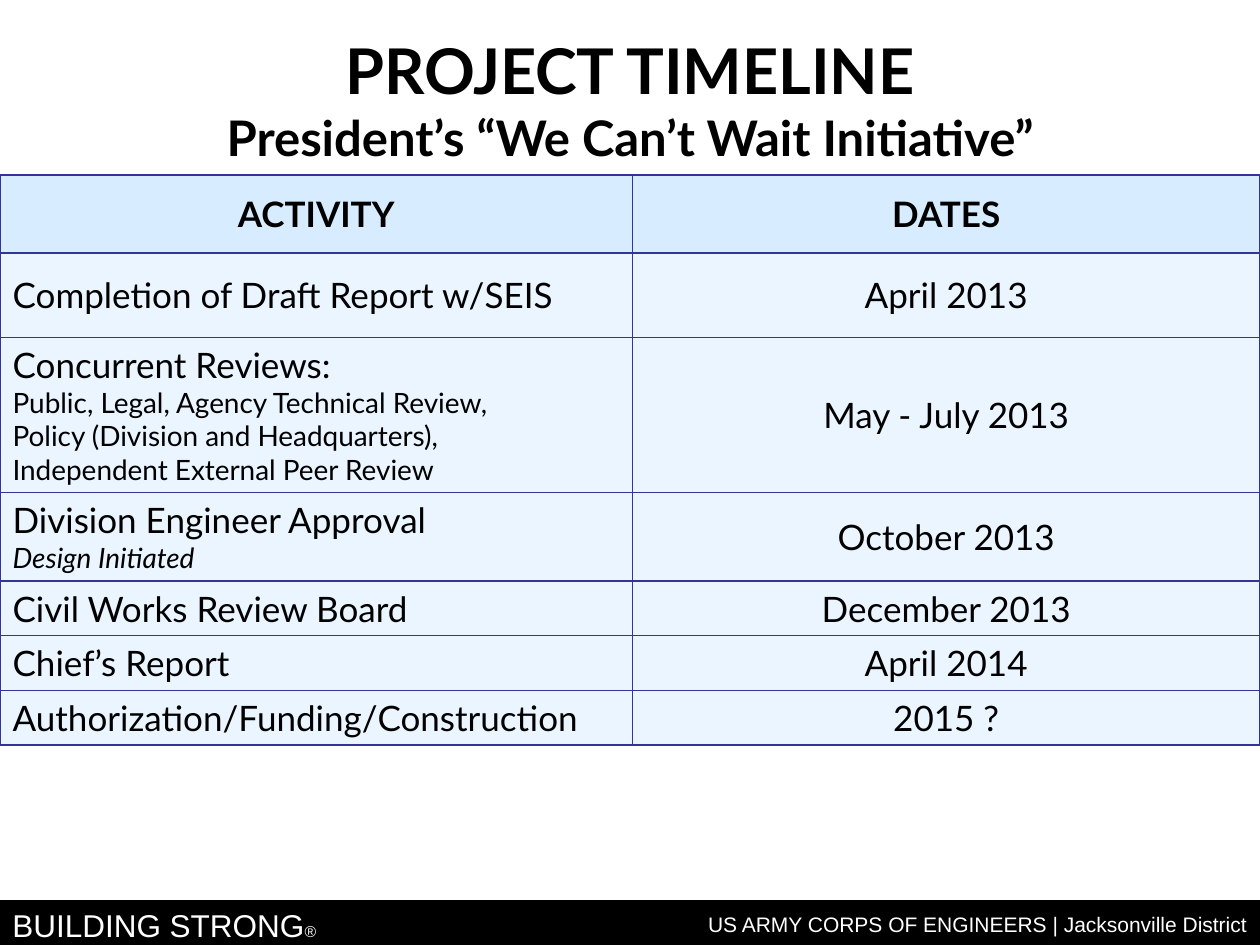
from dataclasses import dataclass

from lxml import etree
from pptx import Presentation
from pptx import util as u
from pptx.dml.color import RGBColor
from pptx.enum import shapes, text
from pptx.oxml import ns


@dataclass(frozen=True)
class Theme:
    ink: str = "000000"
    paper: str = "FFFFFF"
    border: str = "333399"
    header_fill: str = "D8ECFF"
    body_fill: str = "EBF5FF"
    heading_font: str = "Lato"
    footer_font: str = "Arial"
    title: int = 36
    subtitle: int = 28
    cell: int = 20
    detail: int = 16
    motto: int = 18
    mark: int = 9
    office: int = 12


theme = Theme()


def write(paragraph, words, size=theme.cell, font=theme.heading_font, color=theme.ink,
          bold=False, italic=False, align=text.PP_ALIGN.LEFT):
    """Append formatted text to a paragraph; a newline becomes a line break."""
    paragraph.alignment = align
    for index, line in enumerate(words.split("\n")):
        if index:
            paragraph.add_line_break()
        if line:
            run = paragraph.add_run()
            run.text = line
            run.font.size = u.Pt(size)
            run.font.name = font
            run.font.bold = bold
            run.font.italic = italic
            run.font.color.rgb = RGBColor.from_string(color)


def outline_cell(cell):
    properties = cell._tc.get_or_add_tcPr()
    for position, side in enumerate(("lnL", "lnR", "lnT", "lnB")):
        line = etree.Element(ns.qn(f"a:{side}"), w=str(u.Pt(1)))
        fill = etree.SubElement(line, ns.qn("a:solidFill"))
        etree.SubElement(fill, ns.qn("a:srgbClr"), val=theme.border)
        properties.insert(position, line)


presentation = Presentation()
presentation.slide_width = u.Cm(25.4)
presentation.slide_height = u.Cm(19.05)
slide = presentation.slides.add_slide(presentation.slide_layouts[5])
center = text.PP_ALIGN.CENTER

# Title
title = slide.shapes.title
title.left, title.top, title.width, title.height = u.Cm(0), u.Cm(0.36), u.Cm(25.4), u.Cm(3.28)
title.text_frame.auto_size = text.MSO_AUTO_SIZE.NONE
title.text_frame.vertical_anchor = text.MSO_ANCHOR.MIDDLE
heading = title.text_frame.paragraphs[0]
write(heading, "PROJECT TIMELINE\n", size=theme.title, bold=True, align=center)
write(heading, "President’s “We Can’t Wait Initiative”", size=theme.subtitle, bold=True, align=center)

# Footer
bar = slide.shapes.add_shape(shapes.MSO_SHAPE.RECTANGLE, u.Cm(0), u.Cm(18.16), u.Cm(25.4), u.Cm(0.89))
bar.shadow.inherit = False
bar.fill.solid()
bar.fill.fore_color.rgb = RGBColor.from_string(theme.ink)
bar.line.color.rgb = RGBColor.from_string(theme.ink)
bar.line.width = u.Pt(0.75)

footers = [
    (0, 18.14, 10.52, text.PP_ALIGN.LEFT, 1.0,
     [("BUILDING STRONG", theme.motto), ("®", theme.mark)]),
    (11.4, 18.31, 14, text.PP_ALIGN.RIGHT, 0.9,
     [("US ARMY CORPS OF ENGINEERS | Jacksonville District", theme.office)]),
]
for left, top, width, align, spacing, parts in footers:
    box = slide.shapes.add_textbox(u.Cm(left), u.Cm(top), u.Cm(width), u.Cm(0.71))
    box.text_frame.word_wrap = True
    paragraph = box.text_frame.paragraphs[0]
    paragraph.line_spacing = spacing
    for words, size in parts:
        write(paragraph, words, size=size, font=theme.footer_font, color=theme.paper, align=align)

# Timeline table: row height, activity, detail, detail in italics, dates
timeline = [
    (1.57, "ACTIVITY", "", False, "DATES"),
    (1.7, "Completion of Draft Report w/SEIS", "", False, "April 2013"),
    (3.12, "Concurrent Reviews:",
     "Public, Legal, Agency Technical Review,\nPolicy (Division and Headquarters),\n"
     "Independent External Peer Review", False, "May - July 2013"),
    (1.78, "Division Engineer Approval", "Design Initiated", True, "October 2013"),
    (1.1, "Civil Works Review Board", "", False, "December 2013"),
    (1.1, "Chief’s Report", "", False, "April 2014"),
    (1.1, "Authorization/Funding/Construction", "", False, "2015 ?"),
]
table_height = sum(entry[0] for entry in timeline)
table = slide.shapes.add_table(len(timeline), 2, u.Cm(0), u.Cm(3.53), u.Cm(25.4), u.Cm(table_height)).table
table.first_row = table.horz_banding = False
table.columns[0].width = u.Cm(12.75)
table.columns[1].width = u.Cm(12.65)

for index, (height, activity, detail, italic, dates) in enumerate(timeline):
    is_header = index == 0
    row = table.rows[index]
    row.height = u.Cm(height)
    for cell in row.cells:
        cell.vertical_anchor = text.MSO_ANCHOR.MIDDLE
        cell.fill.solid()
        cell.fill.fore_color.rgb = RGBColor.from_string(
            theme.header_fill if is_header else theme.body_fill)
        outline_cell(cell)
    activity_frame, dates_frame = (cell.text_frame for cell in row.cells)
    write(activity_frame.paragraphs[0], activity, bold=is_header,
          align=center if is_header else text.PP_ALIGN.LEFT)
    if detail:
        write(activity_frame.add_paragraph(), detail, size=theme.detail, italic=italic)
    write(dates_frame.paragraphs[0], dates, bold=is_header, align=center)

presentation.save("out.pptx")
